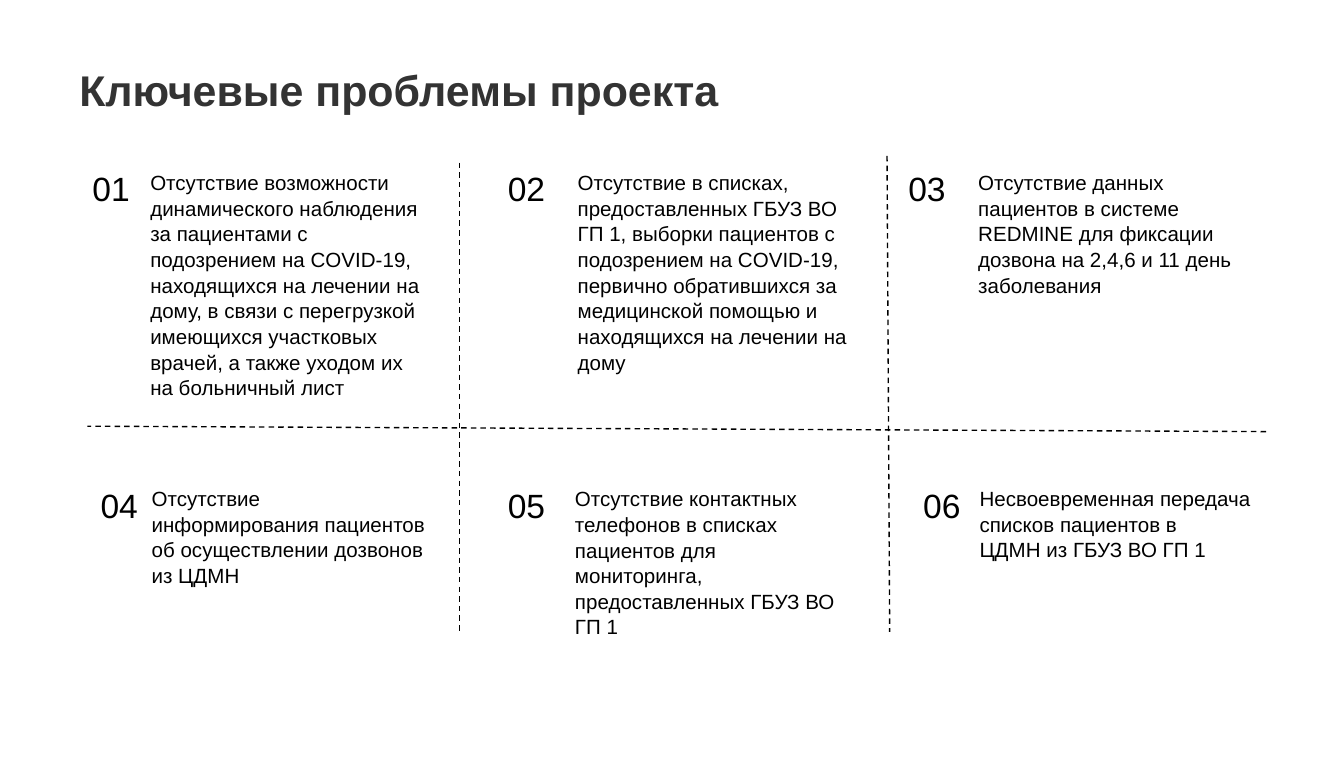
from dataclasses import dataclass

from lxml.etree import SubElement
from pptx import Presentation
from pptx.dml.color import RGBColor
from pptx.enum.dml import MSO_LINE
from pptx.enum.shapes import MSO_CONNECTOR
from pptx.oxml.ns import qn
from pptx.slide import Slide
from pptx.util import Inches, Pt


@dataclass(frozen=True)
class Theme:
    font: str = "Arial"
    title_color: RGBColor = RGBColor(0x33, 0x33, 0x33)
    ink: RGBColor = RGBColor(0, 0, 0)
    title_size: float = 23
    number_size: float = 18
    body_size: float = 11
    body_spacing: float = 1.04
    divider_width: float = 0.75


@dataclass(frozen=True)
class Box:
    left: float
    top: float
    width: float
    height: float


@dataclass(frozen=True)
class Problem:
    number_left: float
    number_width: float
    text_left: float
    text_width: float
    text_height: float
    text: str


@dataclass(frozen=True)
class Divider:
    start_x: float
    start_y: float
    end_x: float
    end_y: float


THEME = Theme()
COLUMNS = 3
NUMBER_TOPS = (1.2, 3.56)
TEXT_TOPS = (1.21, 3.56)

PROBLEMS = (
    Problem(0.59, 0.6, 1.02, 2.84, 1.93,
            "Отсутствие возможности\nдинамического наблюдения\nза пациентами с\n"
            "подозрением на COVID-19,\nнаходящихся на лечении на\n"
            "дому, в связи с перегрузкой\nимеющихся участковых\n"
            "врачей, а также уходом их\nна больничный лист"),
    Problem(3.68, 0.7, 4.2, 2.44, 1.86,
            "Отсутствие в списках,\nпредоставленных ГБУЗ ВО\nГП 1, выборки пациентов с\n"
            "подозрением на COVID-19,\nпервично обратившихся за\n"
            "медицинской помощью и\nнаходящихся на лечении на\nдому"),
    Problem(6.66, 0.6, 7.18, 2.59, 1.5,
            "Отсутствие данных\nпациентов в системе\nREDMINE для фиксации\n"
            "дозвона на 2,4,6 и 11 день\nзаболевания"),
    Problem(0.65, 0.64, 1.03, 2.75, 1.13,
            "Отсутствие\nинформирования пациентов\nоб осуществлении дозвонов\nиз ЦДМН"),
    Problem(3.68, 0.55, 4.18, 2.44, 1.38,
            "Отсутствие контактных телефонов в списках\nпациентов для\nмониторинга,\n"
            "предоставленных ГБУЗ ВО\nГП 1"),
    Problem(6.77, 0.6, 7.19, 3, 0.83,
            "Несвоевременная передача\nсписков пациентов в\nЦДМН из ГБУЗ ВО ГП 1"),
)

DIVIDERS = (
    Divider(3.42, 1.21, 3.42, 4.7),
    Divider(6.6, 1.16, 6.62, 4.7),
    Divider(9.42, 3.21, 0.65, 3.17),
)


def add_text(slide: Slide, box: Box, text: str, size: float,
             color: RGBColor = THEME.ink, bold: bool = False,
             spacing: float = 1.0, inset: bool = True) -> None:
    shape = slide.shapes.add_textbox(
        Inches(box.left), Inches(box.top), Inches(box.width), Inches(box.height))
    text_frame = shape.text_frame
    text_frame.word_wrap = True
    if not inset:
        text_frame.margin_left = text_frame.margin_right = 0
        text_frame.margin_top = text_frame.margin_bottom = 0
    text_frame.text = text
    for paragraph in text_frame.paragraphs:
        paragraph.line_spacing = spacing
        for run in paragraph.runs:
            run.font.name = THEME.font
            run.font.size = Pt(size)
            run.font.bold = bold
            run.font.color.rgb = color


def add_problem(slide: Slide, index: int, problem: Problem) -> None:
    row = index // COLUMNS
    add_text(slide, Box(problem.text_left, TEXT_TOPS[row],
                        problem.text_width, problem.text_height),
             problem.text, THEME.body_size, spacing=THEME.body_spacing)
    add_text(slide, Box(problem.number_left, NUMBER_TOPS[row], problem.number_width, 0.4),
             f"{index + 1:02}", THEME.number_size)


def add_divider(slide: Slide, divider: Divider) -> None:
    connector = slide.shapes.add_connector(
        MSO_CONNECTOR.STRAIGHT,
        Inches(divider.start_x), Inches(divider.start_y),
        Inches(divider.end_x), Inches(divider.end_y))
    connector.line.color.rgb = THEME.ink
    connector.line.width = Pt(THEME.divider_width)
    connector.line.dash_style = MSO_LINE.DASH
    SubElement(connector._element.spPr, qn("a:effectLst"))


def main() -> None:
    presentation = Presentation()
    presentation.slide_width = Inches(10)
    presentation.slide_height = Inches(5.63)
    slide = presentation.slides.add_slide(presentation.slide_layouts[6])
    add_text(slide, Box(0.59, 0.47, 7.17, 0.36), "Ключевые проблемы проекта",
             THEME.title_size, THEME.title_color, bold=True, inset=False)
    for index, problem in enumerate(PROBLEMS):
        add_problem(slide, index, problem)
    for divider in DIVIDERS:
        add_divider(slide, divider)
    presentation.save("out.pptx")


if __name__ == "__main__":
    main()
